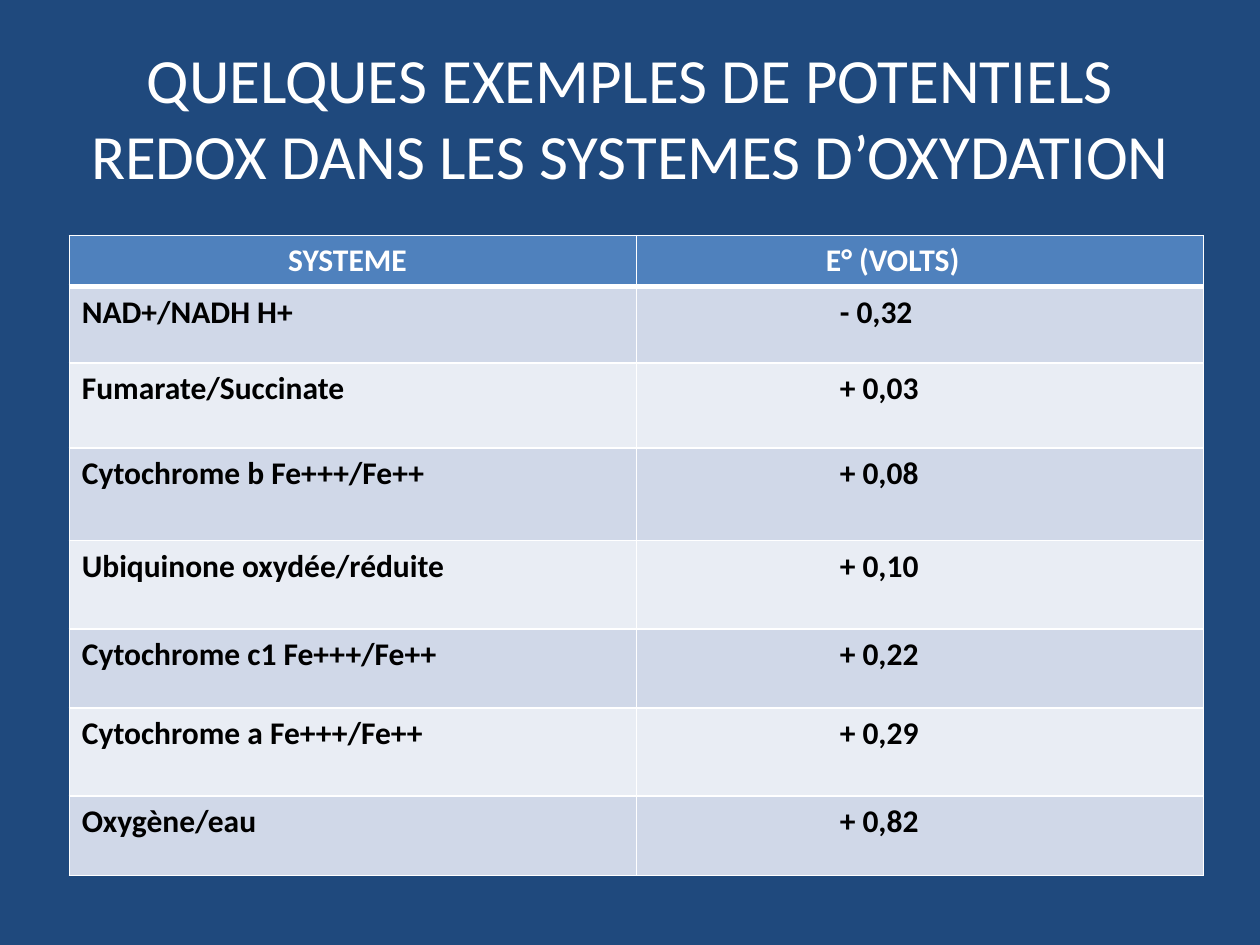
from lxml import etree
from pptx import Presentation
from pptx import util as u
from pptx.dml.color import RGBColor
from pptx.enum import text
from pptx.oxml.ns import qn

NAVY = RGBColor(0x1F, 0x49, 0x7D)
BLUE = RGBColor(0x4F, 0x81, 0xBD)
BAND_DARK = RGBColor(0xD0, 0xD8, 0xE8)
BAND_LIGHT = RGBColor(0xE9, 0xED, 0xF4)
WHITE = RGBColor(0xFF, 0xFF, 0xFF)
BLACK = RGBColor(0, 0, 0)


def add_run(p, words, size, color, bold=False):
    r = p.add_run()
    r.text = words
    r.font.name = "Calibri"
    r.font.size = u.Pt(size)
    r.font.bold = bold
    r.font.color.rgb = color


def set_borders(cell, bottom):
    tcPr = cell._tc.get_or_add_tcPr()
    widths = {"a:lnL": 1, "a:lnR": 1, "a:lnT": 1, "a:lnB": bottom}
    # Border lines come before the fill in a cell's properties
    for i, (tag, width) in enumerate(widths.items()):
        ln = etree.Element(qn(tag), w=str(u.Pt(width)))
        fill = etree.SubElement(ln, qn("a:solidFill"))
        etree.SubElement(fill, qn("a:srgbClr"), val=str(WHITE))
        tcPr.insert(i, ln)


prs = Presentation()
prs.slide_width, prs.slide_height = u.Cm(25.4), u.Cm(19.05)
s = prs.slides.add_slide(prs.slide_layouts[6])
s.background.fill.solid()
s.background.fill.fore_color.rgb = NAVY

# Title
sp = s.shapes.add_textbox(u.Cm(1.27), u.Cm(0.76), u.Cm(22.86), u.Cm(3.18))
tf = sp.text_frame
tf.word_wrap = True
tf.vertical_anchor = text.MSO_ANCHOR.MIDDLE
p = tf.paragraphs[0]
p.alignment = text.PP_ALIGN.CENTER
add_run(p, "QUELQUES EXEMPLES DE POTENTIELS REDOX DANS LES SYSTEMES D’OXYDATION", 36, WHITE)

# Redox potentials
rows = [
    ("SYSTEME", "E° (VOLTS)"),
    ("NAD+/NADH H+", "- 0,32"),
    ("Fumarate/Succinate", "+ 0,03"),
    ("Cytochrome b Fe+++/Fe++", "+ 0,08"),
    ("Ubiquinone oxydée/réduite", "+ 0,10"),
    ("Cytochrome c1 Fe+++/Fe++", "+ 0,22"),
    ("Cytochrome a Fe+++/Fe++", "+ 0,29"),
    ("Oxygène/eau", "+ 0,82"),
]
heights = [1.03, 1.54, 1.71, 1.87, 1.78, 1.59, 1.78, 1.6]
header_margins = (4.41, 3.82)
body_margins = (0.25, 4.1)

table = s.shapes.add_table(len(rows), 2, u.Cm(1.4), u.Cm(4.75),
                           u.Cm(22.86), u.Cm(sum(heights))).table
for col in table.columns:
    col.width = u.Cm(11.43)

for i, (row, height) in enumerate(zip(rows, heights)):
    header = i == 0
    table.rows[i].height = u.Cm(height)
    margins = header_margins if header else body_margins
    band = BLUE if header else (BAND_LIGHT, BAND_DARK)[i % 2]
    for j, words in enumerate(row):
        cell = table.cell(i, j)
        cell.margin_left = u.Cm(margins[j])
        cell.fill.solid()
        cell.fill.fore_color.rgb = band
        set_borders(cell, 3 if header else 1)
        add_run(cell.text_frame.paragraphs[0], words, 18,
                WHITE if header else BLACK, bold=True)

prs.save("out.pptx")
